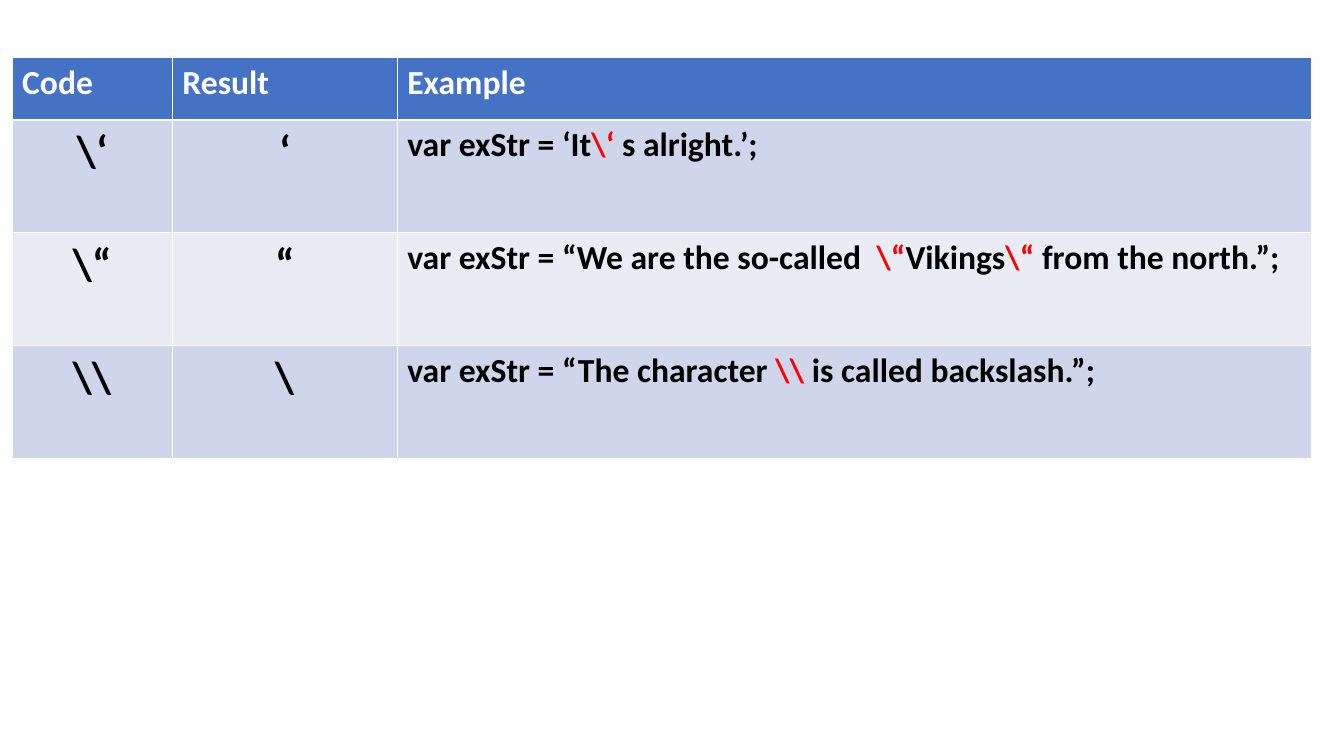
"""Build a slide with a table of string escape sequences."""
from pptx import Presentation, util as u
from pptx.dml.color import RGBColor
from pptx.enum import text

PX = 9144
WHITE = RGBColor(0xFF, 0xFF, 0xFF)
BLACK = RGBColor(0x00, 0x00, 0x00)
RED = RGBColor(0xFF, 0x00, 0x00)
HEADER = RGBColor(0x44, 0x72, 0xC4)
BANDS = [RGBColor(0xE9, 0xEB, 0xF5), RGBColor(0xCF, 0xD5, 0xEA)]

COLUMNS = [159, 223, 907]
ROWS = [62, 112, 112, 112]
CELLS = [
    [["Code"], ["Result"], ["Example"]],
    [["\\‘"], ["‘"], ["var exStr = ‘It", "\\‘ ", "s alright.’;"]],
    [["\\“"], ["“"], ["var exStr = “We are the so-called  ", "\\“", "Vikings",
                      "\\“", " from the north.”;"]],
    [["\\\\"], ["\\"], ["var exStr = “The character ", "\\\\",
                        " is called backslash.”;"]],
]

prs = Presentation()
prs.slide_width = 1333 * PX
prs.slide_height = 750 * PX
s = prs.slides.add_slide(prs.slide_layouts[6])

table = s.shapes.add_table(len(ROWS), len(COLUMNS), 12 * PX, 57 * PX,
                           sum(COLUMNS) * PX, sum(ROWS) * PX).table
for column, width in zip(table.columns, COLUMNS):
    column.width = width * PX
for row, height in zip(table.rows, ROWS):
    row.height = height * PX

for i, row in enumerate(CELLS):
    for j, parts in enumerate(row):
        cell = table.cell(i, j)
        cell.fill.solid()
        cell.fill.fore_color.rgb = BANDS[i % 2] if i else HEADER
        p = cell.text_frame.paragraphs[0]
        symbol = i > 0 and j < 2
        if symbol:
            p.alignment = text.PP_ALIGN.CENTER
        for k, part in enumerate(parts):
            r = p.add_run()
            r.text = part
            r.font.name = "Calibri"
            r.font.size = u.Pt(32 if symbol else 24)
            r.font.bold = True
            r.font.color.rgb = WHITE if i == 0 else RED if k % 2 else BLACK

prs.save("out.pptx")
